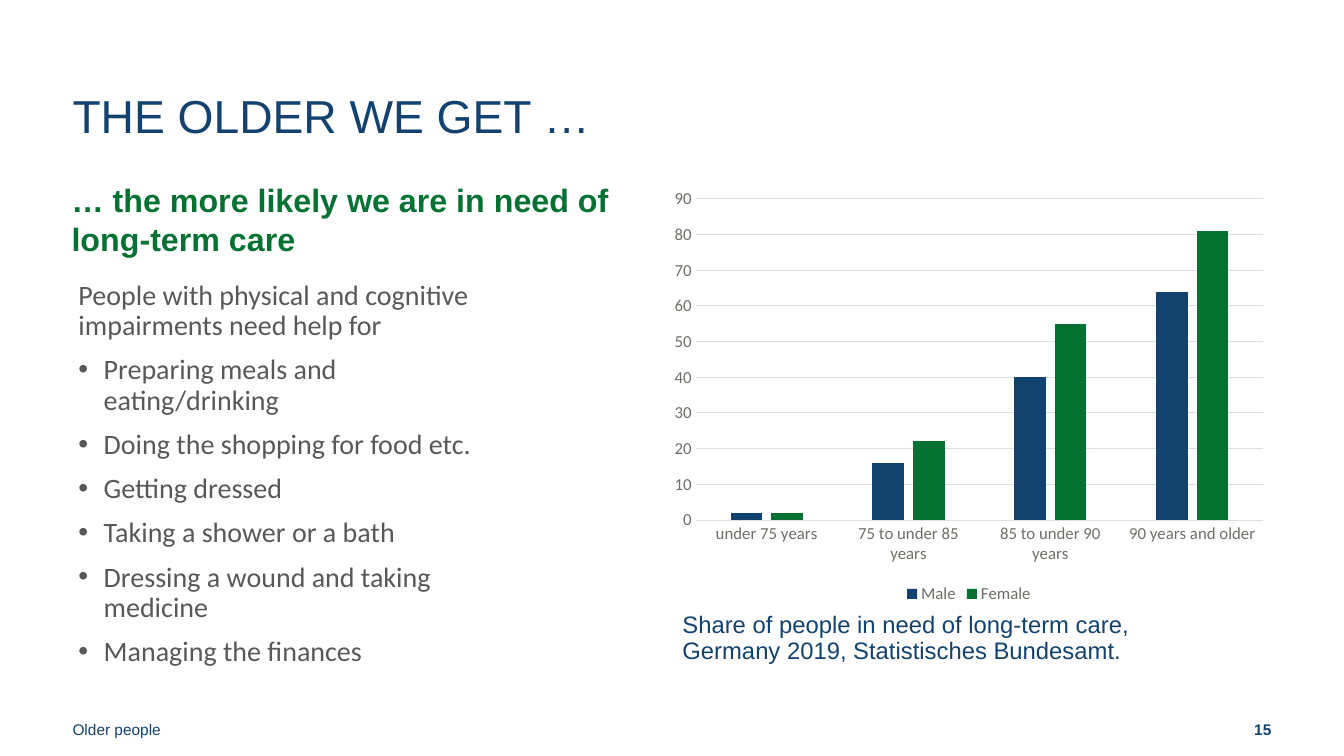
from lxml import etree
from pptx import Presentation
from pptx.chart.data import CategoryChartData
from pptx.dml.color import RGBColor
from pptx.enum.chart import XL_CHART_TYPE as ChartType, XL_LEGEND_POSITION as LegendPosition
from pptx.enum.chart import XL_TICK_MARK as TickMark
from pptx.enum.text import MSO_ANCHOR as Anchor, PP_ALIGN as Align
from pptx.oxml.ns import qn
from pptx.util import Inches, Pt

NAVY, GREEN, GREY = "13426F", "057233", "585857"
AXIS_TEXT, GRID = "6F6F68", "DEDEDC"


def set_font(font, name, size, color, bold=False):
    values = {"name": name, "size": Pt(size), "bold": bold}
    for attribute, value in values.items():
        setattr(font, attribute, value)
    font.color.rgb = RGBColor.from_string(color)


def add_text(box, lines, font, spacing, insets=(0.1, 0.05, 0.1, 0.05),
             anchor=Anchor.TOP, align=Align.LEFT):
    """Add a text box; every line after the first becomes a bullet."""
    frame = slide.shapes.add_textbox(*map(Inches, box)).text_frame
    left, top, right, bottom = map(Inches, insets)
    values = {"word_wrap": True, "vertical_anchor": anchor, "margin_left": left,
              "margin_top": top, "margin_right": right, "margin_bottom": bottom}
    for attribute, value in values.items():
        setattr(frame, attribute, value)
    for index, line in enumerate(lines):
        paragraph = frame.add_paragraph() if index else frame.paragraphs[0]
        paragraph.text = line
        paragraph.alignment = align
        paragraph.line_spacing = spacing
        if index:
            paragraph.space_before = Pt(10)
            properties = paragraph._p.get_or_add_pPr()
            properties.set("marL", str(Inches(0.25)))
            properties.set("indent", str(-Inches(0.25)))
            etree.SubElement(properties, qn("a:buFont")).set("typeface", "Arial")
            etree.SubElement(properties, qn("a:buChar")).set("char", "•")
        set_font(paragraph.font, *font)


presentation = Presentation()
presentation.slide_width = Inches(13.33)
presentation.slide_height = Inches(7.5)
slide = presentation.slides.add_slide(presentation.slide_layouts[6])

# Title, heading and footer
add_text((0.01, 0.74, 11.49, 0.88), ["THE OLDER WE GET …"], ("Arial", 33, NAVY),
         Pt(34), (0.71, 0.05, 0.1, 0.05), Anchor.MIDDLE)
add_text((0, 1.79, 6.35, 0.88), ["… the more likely we are in need of long-term care"],
         ("Arial", 23, GREEN, True), Pt(27.6), (0.71, 0, 0, 0))
add_text((0.01, 6.89, 4.5, 0.6), ["Older people"], ("Arial", 11, NAVY),
         Pt(13.3), (0.71, 0.05, 0, 0.16), Anchor.BOTTOM)
add_text((10.32, 6.89, 3, 0.6), ["15"], ("Arial", 11, NAVY, True),
         Pt(13.3), (0, 0.05, 0.71, 0.16), Anchor.BOTTOM, Align.RIGHT)

# Care needs
care_needs = [
    "People with physical and cognitive impairments need help for",
    "Preparing meals and eating/drinking",
    "Doing the shopping for food etc.",
    "Getting dressed",
    "Taking a shower or a bath",
    "Dressing a wound and taking medicine",
    "Managing the finances",
]
add_text((0.68, 2.74, 4.25, 4.03), care_needs, ("Calibri", 20, GREY), 0.9)

# Chart and its caption
chart_data = CategoryChartData(number_format="0")
chart_data.categories = ["under 75 years", "75 to under 85 years",
                         "85 to under 90 years", "90 years and older"]
chart_data.add_series("Male", [2, 16, 40, 64])
chart_data.add_series("Female", [2, 22, 55, 81])
chart = slide.shapes.add_chart(ChartType.COLUMN_CLUSTERED, Inches(6.57), Inches(1.79),
                               Inches(6.08), Inches(4.24), chart_data).chart
set_font(chart.font, "Calibri", 10, "1D1D1B")
chart.has_title = False
chart.has_legend = True
chart.legend.position = LegendPosition.BOTTOM
chart.legend.include_in_layout = False

plot = chart.plots[0]
plot.gap_width = 219
plot.overlap = -27
plot.vary_by_categories = False
for series, color in zip(plot.series, (NAVY, GREEN)):
    series.format.fill.solid()
    series.format.fill.fore_color.rgb = RGBColor.from_string(color)

category_axis, value_axis = chart.category_axis, chart.value_axis
for axis in (category_axis, value_axis):
    axis.major_tick_mark = axis.minor_tick_mark = TickMark.NONE
for font in (category_axis.tick_labels.font, value_axis.tick_labels.font, chart.legend.font):
    set_font(font, "Calibri", 12, AXIS_TEXT)
for line in (category_axis.format.line, value_axis.major_gridlines.format.line):
    line.color.rgb = RGBColor.from_string(GRID)
    line.width = Pt(0.75)
value_axis.format.line.fill.background()
value_axis.minimum_scale, value_axis.maximum_scale, value_axis.major_unit = 0, 90, 10
value_axis.tick_labels.number_format = "0"
value_axis.tick_labels.number_format_is_linked = False

add_text((6.67, 6.03, 5.56, 0.97),
         ["Share of people in need of long-term care, Germany 2019, Statistisches Bundesamt."],
         ("Arial", 17, NAVY), 0.9)

presentation.save("out.pptx")
